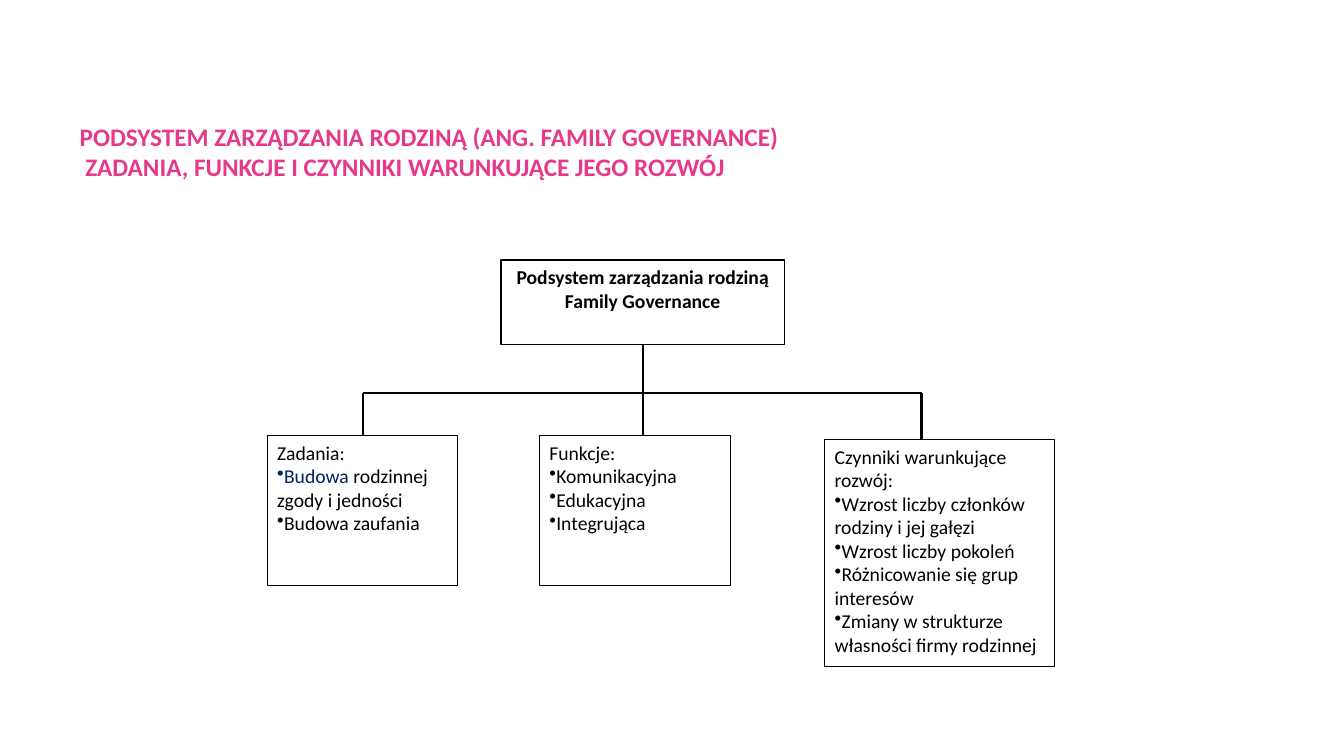
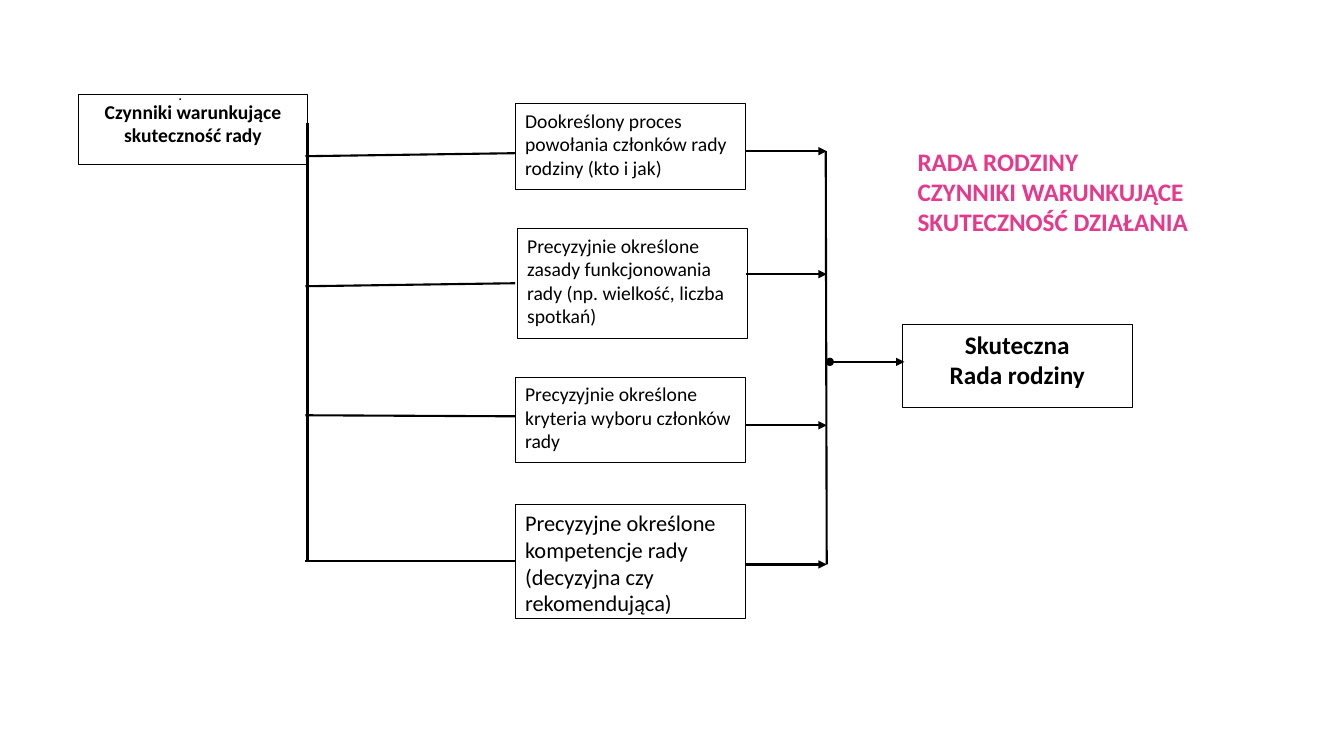
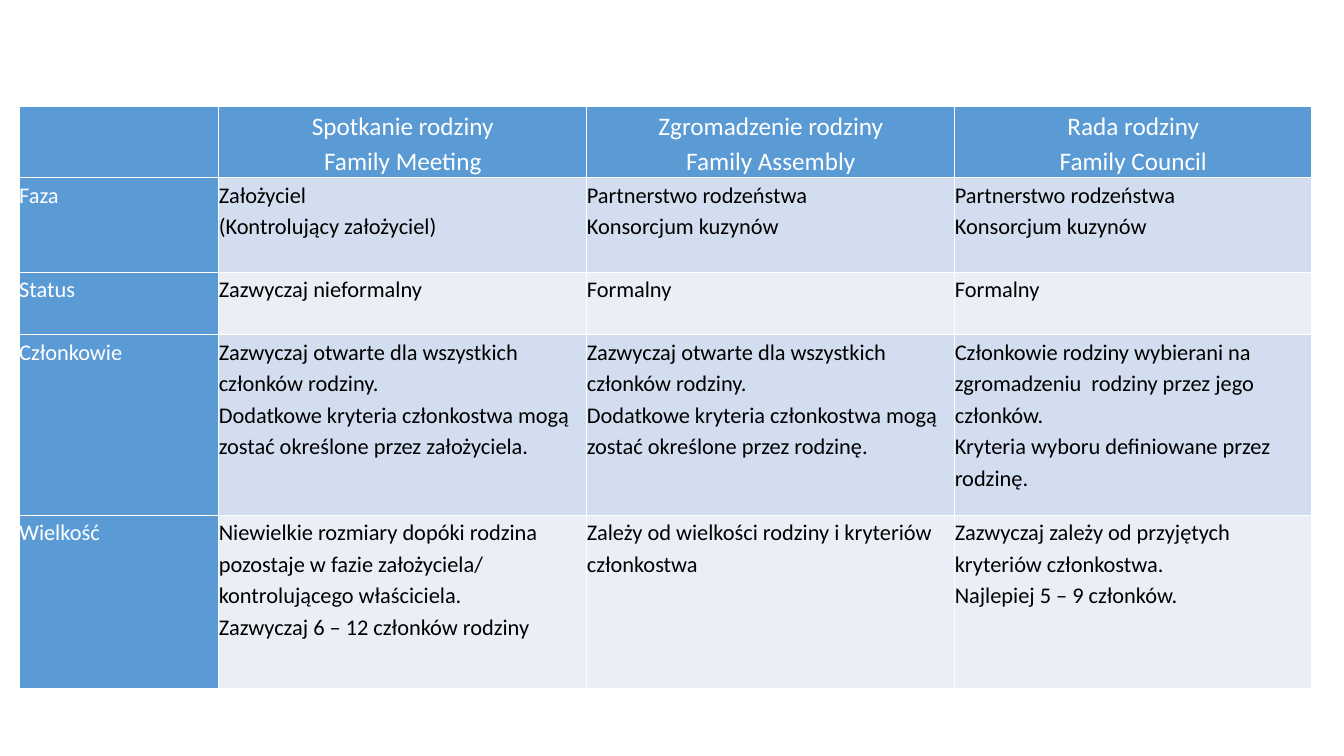
import lxml.etree
import pptx
import pptx.dml.color
import pptx.enum.shapes
import pptx.enum.text
import pptx.oxml.ns
import pptx.util

Inches = pptx.util.Inches
Pt = pptx.util.Pt
RGBColor = pptx.dml.color.RGBColor
Align = pptx.enum.text.PP_ALIGN
Anchor = pptx.enum.text.MSO_ANCHOR
qn = pptx.oxml.ns.qn

FONT = "Calibri"
BLACK = RGBColor(0x00, 0x00, 0x00)
WHITE = RGBColor(0xFF, 0xFF, 0xFF)
PINK = RGBColor(0xE6, 0x39, 0x8C)
NAVY = RGBColor(0x00, 0x20, 0x60)
HEADER_BLUE = RGBColor(0x5B, 0x9B, 0xD5)
BANDS = (RGBColor(0xD2, 0xDE, 0xEF), RGBColor(0xEA, 0xEF, 0xF7))

TITLE_ONLY, BLANK = 5, 6

BRANCHES = [
    (0, 1.74, 1.89, 1.49, 0.95,
     ["Zadania:", "Budowa rodzinnej zgody i jedności", "Budowa zaufania"]),
    (2.7, 1.74, 1.89, 1.49, 3.73,
     ["Funkcje:", "Komunikacyjna", "Edukacyjna", "Integrująca"]),
    (5.53, 1.78, 2.28, 2.25, 6.49,
     ["Czynniki warunkujące rozwój:",
      "Wzrost liczby członków rodziny i jej gałęzi",
      "Wzrost liczby pokoleń",
      "Różnicowanie się grup interesów",
      "Zmiany w strukturze własności firmy rodzinnej"]),
]

FACTORS = [
    (4.33, 0.09, 0.85, 14, 0.61, 0.58, 0.56,
     "Dookreślony proces powołania członków rady rodziny (kto i jak)"),
    (4.35, 1.33, 1.09, 14, 1.9, 1.87, 1.78,
     "Precyzyjnie określone zasady funkcjonowania rady (np. wielkość, liczba spotkań)"),
    (4.33, 2.8, 0.85, 14, 3.18, 3.19, 3.28,
     "Precyzyjnie określone kryteria wyboru członków rady"),
    (4.33, 4.06, 1.14, 16, 4.63, 4.63, 4.66,
     "Precyzyjne określone kompetencje rady (decyzyjna czy rekomendująca)"),
]

COMPARISON = [
    ["", "Spotkanie rodziny\nFamily Meeting", "Zgromadzenie rodziny\nFamily Assembly",
     "Rada rodziny\nFamily Council"],
    ["Faza", "Założyciel\n(Kontrolujący założyciel)",
     "Partnerstwo rodzeństwa\nKonsorcjum kuzynów",
     "Partnerstwo rodzeństwa\nKonsorcjum kuzynów"],
    ["Status", "Zazwyczaj nieformalny", "Formalny", "Formalny"],
    ["Członkowie",
     "Zazwyczaj otwarte dla wszystkich członków rodziny.\n"
     "Dodatkowe kryteria członkostwa mogą zostać określone przez założyciela.",
     "Zazwyczaj otwarte dla wszystkich członków rodziny.\n"
     "Dodatkowe kryteria członkostwa mogą zostać określone przez rodzinę.",
     "Członkowie rodziny wybierani na zgromadzeniu  rodziny przez jego członków.\n"
     "Kryteria wyboru definiowane przez rodzinę."],
    ["Wielkość",
     "Niewielkie rozmiary dopóki rodzina pozostaje w fazie założyciela/ "
     "kontrolującego właściciela.\nZazwyczaj 6 – 12 członków rodziny",
     "Zależy od wielkości rodziny i kryteriów członkostwa",
     "Zazwyczaj zależy od przyjętych kryteriów członkostwa.\nNajlepiej 5 – 9 członków."],
]
COLUMN_WIDTHS = (1.98, 3.65, 3.65, 3.54)
ROW_HEIGHTS = (0.7, 0.94, 0.62, 1.79, 1.72)


def format_paragraph(paragraph, size, color=BLACK, bold=False, align=Align.LEFT):
    paragraph.alignment = align
    paragraph.font.name = FONT
    paragraph.font.size = Pt(size)
    paragraph.font.bold = bold
    paragraph.font.color.rgb = color


def add_bullet(paragraph):
    properties = paragraph._p.get_or_add_pPr()
    properties.set("marL", "0")
    properties.set("indent", "0")
    lxml.etree.SubElement(properties, qn("a:buChar"), char="•")


def place_title(slide, left, top, width, height, text):
    title = slide.shapes.title
    title.left, title.top = Inches(left), Inches(top)
    title.width, title.height = Inches(width), Inches(height)
    frame = title.text_frame
    frame.text = text
    frame.auto_size = pptx.enum.text.MSO_AUTO_SIZE.NONE
    frame.vertical_anchor = Anchor.TOP
    for paragraph in frame.paragraphs:
        format_paragraph(paragraph, 18, PINK, bold=True)


def add_box(slide, left, top, width, height, lines, size=14, border=0.5,
            bold=False, align=Align.LEFT, bulleted=False):
    box = slide.shapes.add_shape(
        pptx.enum.shapes.MSO_SHAPE.RECTANGLE,
        Inches(left), Inches(top), Inches(width), Inches(height))
    box.shadow.inherit = False
    box.fill.solid()
    box.fill.fore_color.rgb = WHITE
    box.line.color.rgb = BLACK
    box.line.width = Pt(border)
    frame = box.text_frame
    frame.word_wrap = True
    frame.vertical_anchor = Anchor.TOP
    frame.text = "\n".join(lines)
    for index, paragraph in enumerate(frame.paragraphs):
        if bulleted and index:
            add_bullet(paragraph)
        format_paragraph(paragraph, size, BLACK, bold, align)
    return box


def add_line(slide, start_x, start_y, end_x, end_y, head=None, tail=None):
    line = slide.shapes.add_connector(
        pptx.enum.shapes.MSO_CONNECTOR.STRAIGHT,
        Inches(start_x), Inches(start_y), Inches(end_x), Inches(end_y))
    line.line.color.rgb = BLACK
    line.line.width = Pt(1.5)
    properties = line.element.spPr
    outline = properties.find(qn("a:ln"))
    for tag, style in (("a:headEnd", head), ("a:tailEnd", tail)):
        if style:
            lxml.etree.SubElement(outline, qn(tag), type=style)
    lxml.etree.SubElement(properties, qn("a:effectLst"))


def highlight_first_word(paragraph, color):
    first = paragraph.runs[0]
    word, rest = first.text.split(" ", 1)
    first.text = word
    first.font.color.rgb = color
    paragraph.add_run().text = " " + rest


def draw_governance_tree(slide, left, top):
    bar_y = top + 1.32
    stem_x = left + 3.73
    add_box(slide, left + 2.32, top, 2.81, 0.84,
            ["Podsystem zarządzania rodziną", "Family Governance"],
            border=1, bold=True, align=Align.CENTER)
    add_line(slide, stem_x, top + 0.84, stem_x, bar_y)
    add_line(slide, left + BRANCHES[0][4], bar_y, left + BRANCHES[-1][4], bar_y)
    boxes = []
    for x, y, width, height, drop_x, lines in BRANCHES:
        boxes.append(add_box(slide, left + x, top + y, width, height, lines, bulleted=True))
        add_line(slide, left + drop_x, bar_y, left + drop_x, top + y)
    highlight_first_word(boxes[0].text_frame.paragraphs[1], NAVY)


def draw_council_flow(slide, left, top):
    trunk_x = left + 2.27
    collector_x = left + 7.42
    box_width = 2.28
    add_box(slide, left, top, 2.27, 0.69, ["Czynniki warunkujące skuteczność rady"],
            border=1, bold=True, align=Align.CENTER)
    add_line(slide, trunk_x, top + 0.28, trunk_x, top + 4.63)
    for x, y, height, size, feed_start, feed_end, arrow_y, text in FACTORS:
        add_box(slide, left + x, top + y, box_width, height, [text], size)
        add_line(slide, trunk_x - 0.02, top + feed_start, left + 4.33, top + feed_end)
        add_line(slide, left + 6.62, top + arrow_y, collector_x, top + arrow_y,
                 tail="triangle")
    add_line(slide, collector_x - 0.01, top + 0.56, collector_x, top + 4.66)
    add_box(slide, left + 8.17, top + 2.28, box_width, 0.82,
            ["Skuteczna", "Rada rodziny"], 18, bold=True, align=Align.CENTER)
    add_line(slide, left + 7.45, top + 2.65, left + 8.19, top + 2.65, "oval", "triangle")


def add_dot(slide, left, top):
    dot = slide.shapes.add_textbox(Inches(left), Inches(top), Inches(0.24), Inches(0.29))
    dot.text_frame.text = "."
    format_paragraph(dot.text_frame.paragraphs[0], 11)


def set_cell_borders(cell):
    properties = cell._tc.get_or_add_tcPr()
    for side in ("a:lnL", "a:lnR", "a:lnT", "a:lnB"):
        border = lxml.etree.SubElement(properties, qn(side), w=str(Pt(1)))
        fill = lxml.etree.SubElement(border, qn("a:solidFill"))
        lxml.etree.SubElement(fill, qn("a:srgbClr"), val=str(WHITE))


def draw_comparison_table(slide, left, top):
    table = slide.shapes.add_table(
        len(ROW_HEIGHTS), len(COLUMN_WIDTHS), Inches(left), Inches(top),
        Inches(sum(COLUMN_WIDTHS)), Inches(sum(ROW_HEIGHTS))).table
    for column, width in zip(table.columns, COLUMN_WIDTHS):
        column.width = Inches(width)
    for row_index, (row, height) in enumerate(zip(table.rows, ROW_HEIGHTS)):
        row.height = Inches(height)
        for column_index, cell in enumerate(row.cells):
            is_top = row_index == 0
            is_header = is_top or column_index == 0
            set_cell_borders(cell)
            cell.fill.solid()
            cell.fill.fore_color.rgb = HEADER_BLUE if is_header else BANDS[(row_index - 1) % 2]
            cell.margin_left = cell.margin_right = cell.margin_top = cell.margin_bottom = 0
            cell.text = COMPARISON[row_index][column_index]
            for paragraph in cell.text_frame.paragraphs:
                paragraph.line_spacing = 1.15
                format_paragraph(paragraph, 18 if is_top else 16,
                                 WHITE if is_header else BLACK,
                                 align=Align.CENTER if is_top else Align.LEFT)


def add_slide(deck, layout):
    return deck.slides.add_slide(deck.slide_layouts[layout])


def main():
    deck = pptx.Presentation()
    deck.slide_width, deck.slide_height = Inches(13.33), Inches(7.5)

    governance = add_slide(deck, TITLE_ONLY)
    place_title(governance, 0.69, 1.15, 7.35, 1.01,
                "PODSYSTEM ZARZĄDZANIA RODZINĄ (ANG. FAMILY GOVERNANCE)\n"
                " ZADANIA, FUNKCJE I CZYNNIKI WARUNKUJĄCE JEGO ROZWÓJ")
    draw_governance_tree(governance, 2.65, 2.58)

    council = add_slide(deck, TITLE_ONLY)
    place_title(council, 9, 1.4, 3.87, 1.35,
                "RADA RODZINY\nCZYNNIKI WARUNKUJĄCE SKUTECZNOŚĆ DZIAŁANIA")
    draw_council_flow(council, 0.78, 0.94)
    add_dot(council, 1.67, 0.8)

    draw_comparison_table(add_slide(deck, BLANK), 0.19, 1.06)

    deck.save("out.pptx")


if __name__ == "__main__":
    main()
